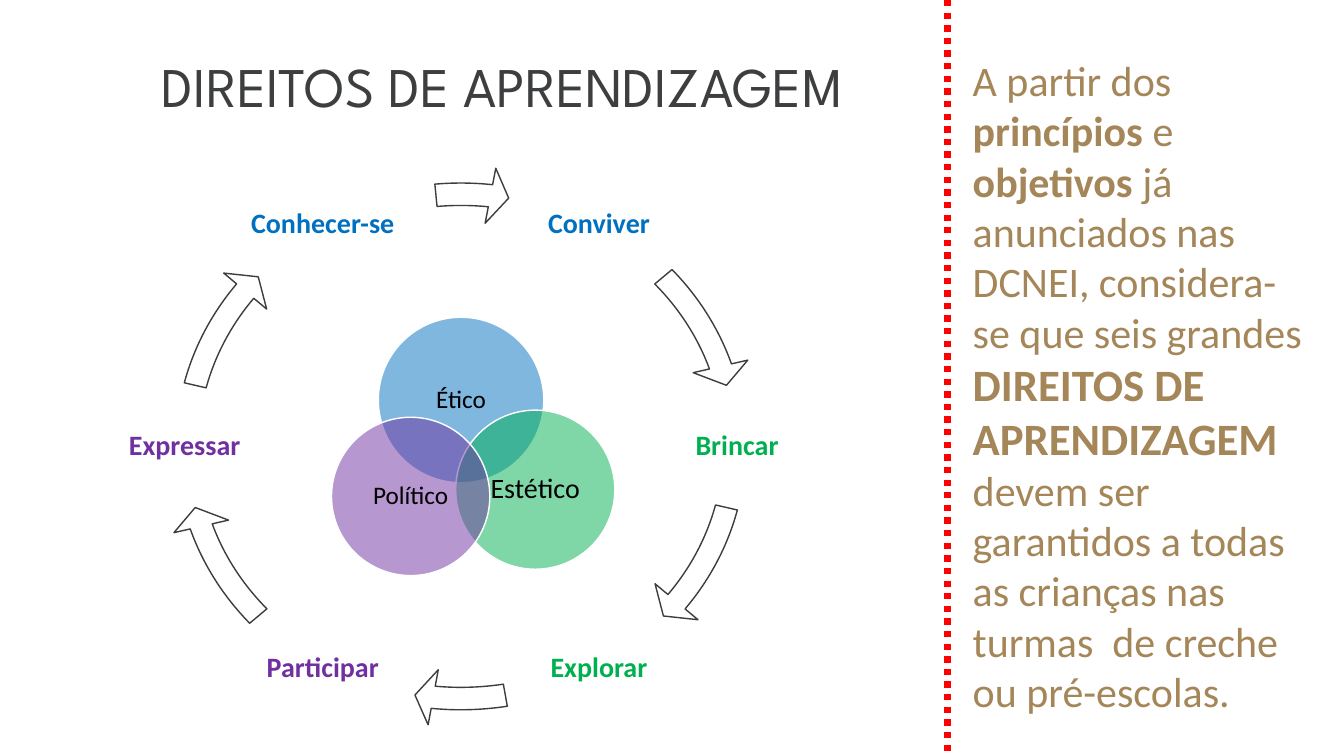
from math import cos, radians, sin

from lxml.etree import SubElement
from pptx import Presentation
from pptx.dml.color import RGBColor
from pptx.enum.dml import MSO_LINE
from pptx.enum.shapes import MSO_CONNECTOR, MSO_SHAPE as SHAPE
from pptx.enum.text import MSO_ANCHOR as ANCHOR, MSO_AUTO_SIZE as AUTO, PP_ALIGN as ALIGN
from pptx.oxml.ns import qn
from pptx.util import Cm, Pt

COLORS = {
    "white": "FFFFFF", "black": "000000", "title": "3C3E3F", "outline": "3D3D3C",
    "gold": "A48658", "red": "FF0000",
    "blue": "0070C0", "green": "00B050", "purple": "7030A0",
}

# Right, its colour, and the start and end angle of the arrow that follows it
RIGHTS = [
    ("Conviver", "blue", 320.06, 342.88),
    ("Brincar", "green", 12.95, 35.76),
    ("Explorar", "green", 79.86, 96.29),
    ("Participar", "purple", 140.06, 162.88),
    ("Expressar", "purple", 192.95, 215.76),
    ("Conhecer-se", "blue", 264.34, 276.74),
]
# Principle, its colour, text size, centre offset from the ring's centre, diameter
PRINCIPLES = [
    ("Ético", "blue", 18, 0, -1.17, 4.17),
    ("Estético", "green", 20, 1.87, 1.09, 4.01),
    ("Político", "purple", 18, -1.27, 1.26, 3.99),
]
# Passage, size, bold
PASSAGES = [
    ("A partir dos ", 30, False),
    ("princípios", 30, True),
    (" e ", 30, False),
    ("objetivos ", 30, True),
    ("já anunciados nas DCNEI, considera-se que seis grandes ", 30, False),
    ("DIREITOS DE APRENDIZAGEM", 32, True),
    (" devem ser garantidos a todas as crianças nas turmas\u00a0 de creche ou pré-escolas.", 30, False),
]


def rgb(name):
    return RGBColor.from_string(COLORS[name])


def style(run, size, color, bold=False, face="Calibri"):
    run.font.name, run.font.size, run.font.bold = face, Pt(size), bold
    run.font.color.rgb = rgb(color)


def place(shape, left, top, width, height):
    shape.left, shape.top, shape.width, shape.height = map(Cm, (left, top, width, height))


def centred_text(shape, text, size, color, inset, bold=False):
    frame = shape.text_frame
    frame.text = text
    frame.word_wrap = True
    frame.vertical_anchor = ANCHOR.MIDDLE
    frame.margin_left = frame.margin_right = frame.margin_top = frame.margin_bottom = Cm(inset)
    paragraph = frame.paragraphs[0]
    paragraph.alignment, paragraph.line_spacing = ALIGN.CENTER, 0.9
    style(paragraph.runs[0], size, color, bold)


def outlined(slide, kind, box, fill, line):
    shape = slide.shapes.add_shape(kind, *map(Cm, box))
    shape.shadow.inherit = False
    shape.fill.solid()
    shape.fill.fore_color.rgb = rgb(fill)
    shape.line.color.rgb = rgb(line)
    shape.line.width = Pt(1)
    return shape


def draw_rights_ring(slide, left, top, width, height):
    """Six rights at 60-degree steps, with an arrow from each to the next."""
    center_x, center_y = left + width / 2, top + height / 2
    radius_x, radius_y = 6.96, 6.45
    label_width, label_height = 5.6, 2.9
    for step, (right, color, start, end) in enumerate(RIGHTS):
        angle = radians(60 * step - 60)
        label = slide.shapes.add_textbox(
            Cm(center_x + radius_x * cos(angle) - label_width / 2),
            Cm(center_y + radius_y * sin(angle) - label_height / 2),
            Cm(label_width), Cm(label_height))
        centred_text(label, right, 20, color, 0.05, bold=True)
        arrow = outlined(slide, SHAPE.CIRCULAR_ARROW, (left, top, width, height), "white", "outline")
        # Angles are stored in 1/60000 degree, adjustments in 1/100000
        for index, value in enumerate((0.04, 4.17 * 0.6, end * 0.6, start * 0.6, 0.05)):
            arrow.adjustments[index] = value


def draw_principles(slide, center_x, center_y):
    for principle, color, size, dx, dy, diameter in PRINCIPLES:
        box = (center_x + dx - diameter / 2, center_y + dy - diameter / 2, diameter, diameter)
        circle = outlined(slide, SHAPE.OVAL, box, color, "white")
        tint = circle.fill._xPr.find(qn("a:solidFill"))[0]
        SubElement(tint, qn("a:alpha")).set("val", "50000")
        centred_text(circle, principle, size, "black", 0.13)


def draw_divider(slide, x, height):
    divider = slide.shapes.add_connector(MSO_CONNECTOR.STRAIGHT, Cm(x), 0, Cm(x), height)
    divider.line.color.rgb = rgb("red")
    divider.line.width = Pt(4.5)
    divider.line.dash_style = MSO_LINE.ROUND_DOT
    SubElement(divider._element.spPr, qn("a:effectLst"))


def write_title(title, *box):
    place(title, *box)
    title.text_frame.text = "DIREITOS DE APRENDIZAGEM"
    title.text_frame.auto_size = AUTO.SHAPE_TO_FIT_TEXT
    heading = title.text_frame.paragraphs[0]
    heading.alignment = ALIGN.CENTER
    style(heading.runs[0], 40, "title", face="League Spartan")


def write_statement(body, *box):
    place(body, *box)
    body.text_frame.auto_size = AUTO.SHAPE_TO_FIT_TEXT
    statement = body.text_frame.paragraphs[0]
    statement.space_before = Pt(0)
    properties = statement._p.get_or_add_pPr()
    properties.set("marL", "0")
    properties.set("indent", "0")
    SubElement(properties, qn("a:buNone"))
    for passage, size, bold in PASSAGES:
        run = statement.add_run()
        run.text = passage
        style(run, size, "gold", bold)


def main():
    deck = Presentation()
    deck.slide_width, deck.slide_height = Cm(33.87), Cm(19.05)
    slide = deck.slides.add_slide(deck.slide_layouts[1])
    title, body = slide.placeholders
    write_title(title, 0.99, 1.17, 23.34, 1.96)
    write_statement(body, 24.26, 1.24, 8.97, 17.09)
    draw_divider(slide, 23.88, deck.slide_height)
    draw_rights_ring(slide, 4.01, 4.19, 15.21, 14.12)
    draw_principles(slide, 11.62, 11.25)
    deck.save("out.pptx")


if __name__ == "__main__":
    main()
